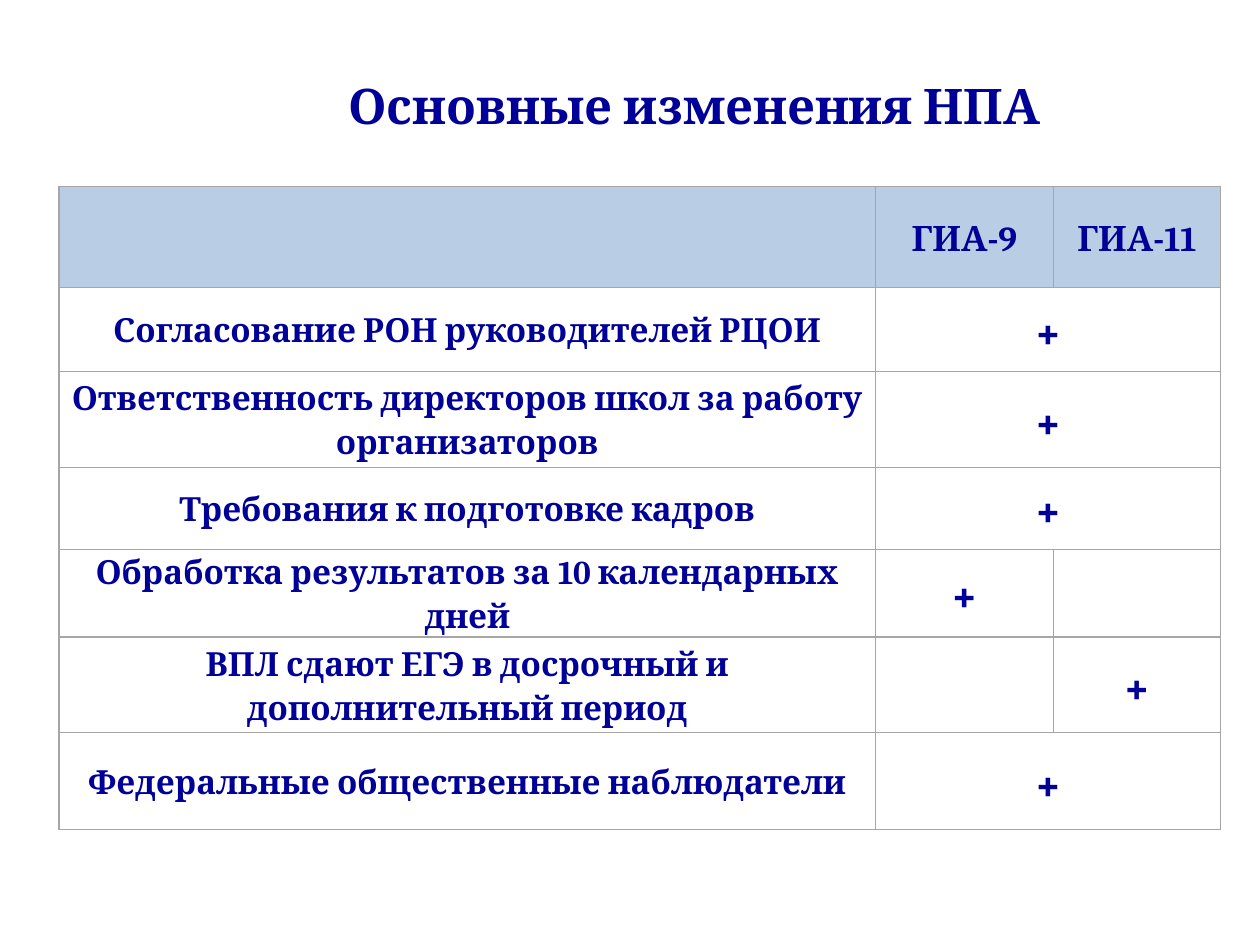
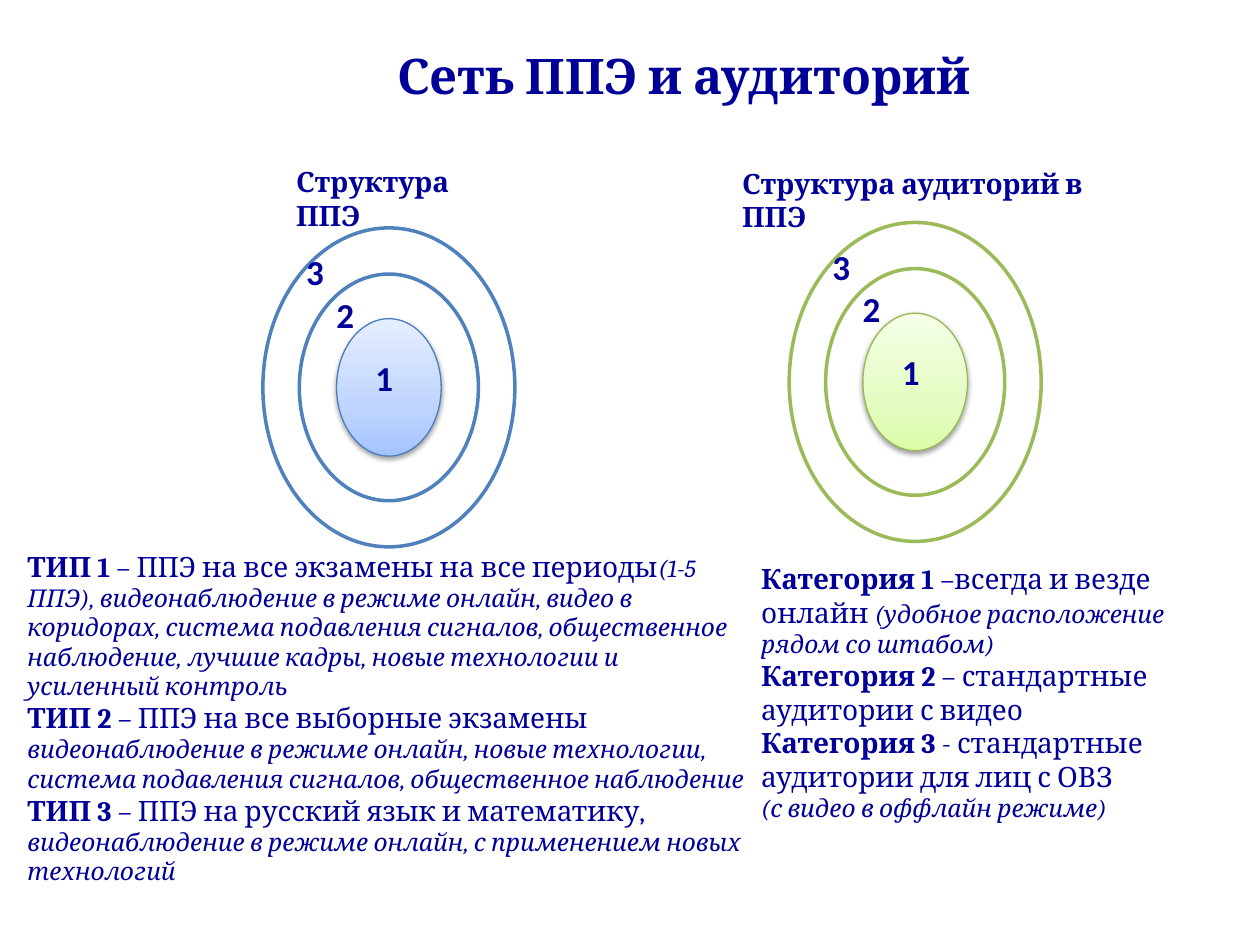
from lxml.etree import SubElement
from pptx import Presentation
from pptx.dml.color import RGBColor
from pptx.enum.shapes import MSO_SHAPE
from pptx.enum.text import MSO_ANCHOR, MSO_AUTO_SIZE, PP_ALIGN
from pptx.oxml.ns import qn
from pptx.util import Cm, Pt

THEME = {
    "ink": "000099",
    "header": "B9CDE5",
    "border": "A6A6A6",
    "paper": "FFFFFF",
    "styles": {
        "title": {"name": "Cambria", "size": Pt(28), "bold": True},
        "column": {"name": "Cambria", "size": Pt(20), "bold": True},
        "row": {"name": "Cambria", "size": Pt(19), "bold": True},
        "mark": {"name": "Cambria", "size": Pt(26), "bold": True},
        "number": {"name": "Calibri", "size": Pt(20), "bold": True},
        "term": {"name": "Cambria", "size": Pt(16), "bold": True},
        "plain": {"name": "Cambria", "size": Pt(16), "bold": False},
        "detail": {"name": "Cambria", "size": Pt(14), "bold": False, "italic": True},
    },
}


def set_values(target, values):
    for name, value in values.items():
        setattr(target, name, value)


def write(frame, paragraphs, **paragraph_format):
    """Fill a text frame with paragraphs, each a list of (style, text) runs."""
    for index, runs in enumerate(paragraphs):
        paragraph = frame.add_paragraph() if index else frame.paragraphs[0]
        set_values(paragraph, paragraph_format)
        for style, text in runs:
            run = paragraph.add_run()
            run.text = text
            set_values(run.font, THEME["styles"][style])
            run.font.color.rgb = RGBColor.from_string(THEME["ink"])


presentation = Presentation()
presentation.slide_width, presentation.slide_height = Cm(25.4), Cm(19.05)
title_only, two_content = presentation.slide_layouts[5], presentation.slide_layouts[3]
changes_slide = presentation.slides.add_slide(title_only)
network_slide = presentation.slides.add_slide(two_content)

frame_format = {
    "word_wrap": True,
    "auto_size": MSO_AUTO_SIZE.NONE,
    "vertical_anchor": MSO_ANCHOR.TOP,
}
titles = [
    (changes_slide, "Основные изменения НПА", 4.37, 1.4, 19.25, PP_ALIGN.CENTER),
    (network_slide, "Сеть ППЭ и аудиторий", 7.75, 0.79, 12.93, PP_ALIGN.LEFT),
]
for slide, text, left, top, width, alignment in titles:
    title = slide.shapes.title
    set_values(title, {"left": Cm(left), "top": Cm(top), "width": Cm(width), "height": Cm(1.45)})
    set_values(title.text_frame, frame_format)
    write(title.text_frame, [[("title", text)]], alignment=alignment)

# Table of changes: a row with a single mark applies to both exams
column_widths = [16.46, 3.58, 3.38]
row_heights = [2.03, 1.7, 1.93, 1.65, 1.73, 1.93, 1.96]
change_rows = [
    ("", "ГИА-9", "ГИА-11"),
    ("Согласование РОН руководителей РЦОИ", "+"),
    ("Ответственность директоров школ за работу организаторов", "+"),
    ("Требования к подготовке кадров", "+"),
    ("Обработка результатов за 10 календарных дней", "+", ""),
    ("ВПЛ сдают ЕГЭ в досрочный и дополнительный период", "", "+"),
    ("Федеральные общественные наблюдатели", "+"),
]
table = changes_slide.shapes.add_table(
    len(change_rows), len(column_widths), Cm(1.19), Cm(3.76),
    Cm(sum(column_widths)), Cm(sum(row_heights))).table
set_values(table, {"first_row": False, "horz_banding": False})
for column, width in zip(table.columns, column_widths):
    column.width = Cm(width)
cell_format = {
    "vertical_anchor": MSO_ANCHOR.MIDDLE,
    "margin_left": Cm(0.18), "margin_right": Cm(0.18),
    "margin_top": 0, "margin_bottom": 0,
}
for row_index, texts in enumerate(change_rows):
    table.rows[row_index].height = Cm(row_heights[row_index])
    if len(texts) == 2:
        table.cell(row_index, 1).merge(table.cell(row_index, 2))
    for column_index in range(len(column_widths)):
        cell = table.cell(row_index, column_index)
        set_values(cell, cell_format)
        properties = cell._tc.get_or_add_tcPr()
        for side in ("lnL", "lnR", "lnT", "lnB"):
            line = SubElement(properties, qn(f"a:{side}"), w=str(Pt(0.75)))
            SubElement(SubElement(line, qn("a:solidFill")), qn("a:srgbClr"), val=THEME["border"])
        if row_index == 0:
            cell.fill.solid()
            cell.fill.fore_color.rgb = RGBColor.from_string(THEME["header"])
        else:
            cell.fill.background()
        if column_index < len(texts) and texts[column_index]:
            style = "column" if row_index == 0 else "mark" if column_index else "row"
            write(cell.text_frame, [[(style, texts[column_index])]],
                  alignment=PP_ALIGN.CENTER, line_spacing=1.15)

# Concentric rings, numbered from the core outwards
ring_sizes = [(5.08, 6.43), (3.61, 4.57), (2.11, 2.77)]
number_offsets = [("1", -0.52, -0.75), ("2", -1.31, -2.02), ("3", -1.92, -2.88)]
diagrams = [
    {"center": (7.84, 7.81), "ring": "4F81BD", "edge": "4B7EBC",
     "core": ["A4C4FF", "BFD4FF", "E6EEFF"],
     "heading": ("Структура ППЭ", 5.72, 3.2, 4.6)},
    {"center": (18.45, 7.7), "ring": "9BBB59", "edge": "98B955",
     "core": ["DAFDA7", "E4FCC2", "F5FFE7"],
     "heading": ("Структура аудиторий в ППЭ", 14.71, 3.23, 8.2)},
]
for diagram in diagrams:
    center_x, center_y = diagram["center"]
    for width, height in ring_sizes:
        ellipse = network_slide.shapes.add_shape(
            MSO_SHAPE.OVAL, Cm(center_x - width / 2), Cm(center_y - height / 2),
            Cm(width), Cm(height))
        ellipse.shadow.inherit = False
        is_core = (width, height) == ring_sizes[-1]
        ellipse.line.color.rgb = RGBColor.from_string(diagram["edge" if is_core else "ring"])
        ellipse.line.width = Pt(0.75 if is_core else 2)
        if not is_core:
            ellipse.fill.solid()
            ellipse.fill.fore_color.rgb = RGBColor.from_string(THEME["paper"])
            continue
        ellipse.fill.gradient()
        ellipse.fill.gradient_angle = 90
        properties = ellipse._element.spPr
        stops = properties.find(".//" + qn("a:gsLst"))
        for stop in list(stops):
            stops.remove(stop)
        for position, color in zip((0, 35000, 100000), diagram["core"]):
            stop = SubElement(stops, qn("a:gs"), pos=str(position))
            SubElement(stop, qn("a:srgbClr"), val=color)
        shadow = SubElement(properties.find(qn("a:effectLst")), qn("a:outerShdw"),
                            blurRad=str(Pt(3.1)), dist=str(Pt(1.6)), dir="5400000", rotWithShape="0")
        SubElement(SubElement(shadow, qn("a:srgbClr"), val="000000"), qn("a:alpha"), val="38000")

    heading, left, top, width = diagram["heading"]
    labels = [("term", heading, left, top, width, 0.94)]
    labels += [("number", number, center_x + dx, center_y + dy, 0.79, 1.12)
               for number, dx, dy in number_offsets]
    for style, text, left, top, width, height in labels:
        label = network_slide.shapes.add_textbox(Cm(left), Cm(top), Cm(width), Cm(height))
        set_values(label.text_frame, frame_format)
        write(label.text_frame, [[(style, text)]])

# Explanations under the diagrams
site_types = [
    [("term", "ТИП 1 "), ("plain", "– ППЭ на все экзамены на все периоды"),
     ("detail", "(1-5 ППЭ), видеонаблюдение в режиме онлайн, видео в коридорах, "
                "система подавления сигналов, общественное наблюдение, лучшие кадры, "
                "новые технологии и усиленный контроль")],
    [("term", "ТИП 2 "), ("plain", "– ППЭ на все выборные экзамены")],
    [("detail", "видеонаблюдение в режиме онлайн, новые технологии, "
                "система подавления сигналов, общественное наблюдение")],
    [("term", "ТИП 3 "), ("plain", "– ППЭ на русский язык и математику,")],
    [("detail", "видеонаблюдение в режиме онлайн, с применением новых технологий")],
]
room_categories = [
    [("term", "Категория 1 "), ("plain", "–всегда и везде онлайн "),
     ("detail", "(удобное расположение рядом со штабом)")],
    [("term", "Категория 2 "), ("plain", "– стандартные аудитории с видео")],
    [("term", "Категория 3 "), ("plain", "- стандартные аудитории для лиц с ОВЗ")],
    [("detail", "(с видео в оффлайн режиме)")],
]
explanations = [
    (1, site_types, 0.3, 10.95, 15.19, 6.5),
    (2, room_categories, 15.09, 11.2, 10.31, 4.88),
]
for placeholder_index, paragraphs, left, top, width, height in explanations:
    body = network_slide.placeholders[placeholder_index]
    set_values(body, {"left": Cm(left), "top": Cm(top), "width": Cm(width), "height": Cm(height)})
    set_values(body.text_frame, frame_format)
    write(body.text_frame, paragraphs, space_before=Pt(0))
    for paragraph in body.text_frame.paragraphs:
        properties = paragraph._p.get_or_add_pPr()
        properties.set("marL", "0")
        properties.set("indent", "0")
        SubElement(properties, qn("a:buNone"))

presentation.save("out.pptx")
